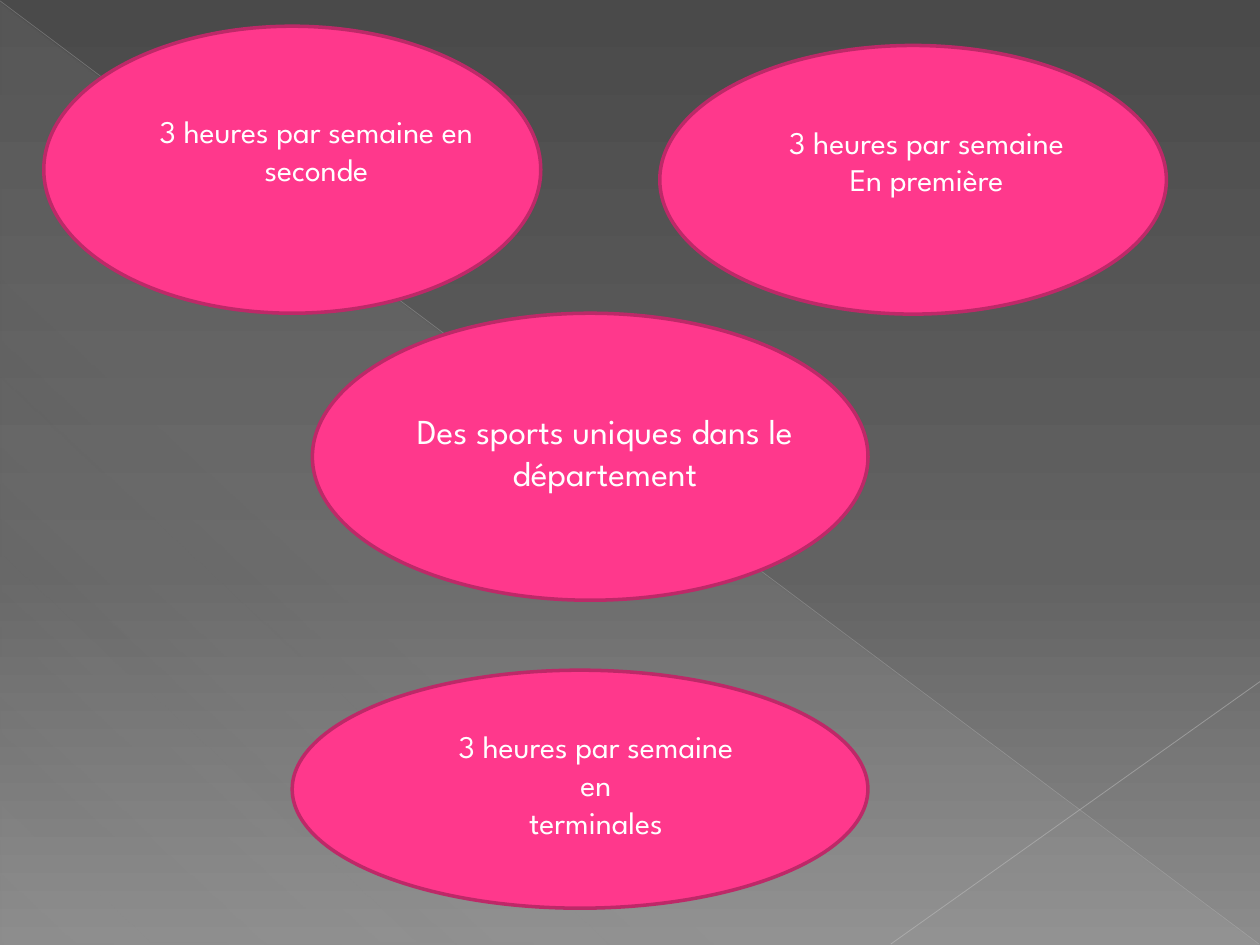
import pptx
import pptx.util
import pptx.dml.color
import pptx.enum.shapes
import pptx.enum.text
import pptx.oxml
import pptx.oxml.ns
from lxml import etree

Pt = pptx.util.Pt
qn = pptx.oxml.ns.qn
SHAPE = pptx.enum.shapes.MSO_SHAPE
FONT = "League Spartan"
COLORS = {
    "bg_top": "4A4A4A", "bg_mid": "626262", "bg_bottom": "8C8C8C",
    "veil": "D2D2D2", "diagonal": "BFBFBF", "corner": "C6C6C6",
    "pink": "FF388C", "pink_edge": "BD2968", "text": "FFFFFF",
}


def rgb(name):
    return pptx.dml.color.RGBColor.from_string(COLORS[name])


def set_alpha(color, percent):
    etree.SubElement(color, qn("a:alpha")).set("val", str(percent * 1000))


def replace_fill(fill, stops, angle):
    """Swap a fill element for a linear gradient of (position, colour, opacity) stops."""
    grad = etree.Element(qn("a:gradFill"), rotWithShape="1")
    stop_list = etree.SubElement(grad, qn("a:gsLst"))
    for position, name, opacity in stops:
        gs = etree.SubElement(stop_list, qn("a:gs"), pos=str(position * 1000))
        color = etree.SubElement(gs, qn("a:srgbClr"), val=COLORS[name])
        if opacity < 100:
            set_alpha(color, opacity)
    etree.SubElement(grad, qn("a:lin"), ang=str(angle * 60000), scaled="0")
    fill.getparent().replace(fill, grad)


def add_line(s, start, end, name, width, opacity):
    line = s.shapes.add_connector(
        pptx.enum.shapes.MSO_CONNECTOR.STRAIGHT, *map(Pt, start + end))
    line.line.width = Pt(width)
    line.line.color.rgb = rgb(name)
    sp_pr = line._element.spPr
    set_alpha(sp_pr.find(".//" + qn("a:srgbClr")), opacity)
    etree.SubElement(sp_pr, qn("a:effectLst"))


def add_backdrop(s, width, height):
    s.background.fill.solid()
    replace_fill(s.element.find(".//" + qn("p:bgPr"))[0],
                 [(0, "bg_top", 100), (60, "bg_mid", 100), (100, "bg_bottom", 100)], 90)
    veil = s.shapes.add_shape(SHAPE.RIGHT_TRIANGLE, Pt(0.5), Pt(1.5),
                              Pt(width - 1), Pt(height - 1.5))
    veil.shadow.inherit = False
    veil.line.fill.background()
    veil.fill.solid()
    replace_fill(veil._element.spPr.find(qn("a:solidFill")),
                 [(0, "veil", 10), (70, "veil", 8), (100, "veil", 1)], 133)
    add_line(s, (0, 0.5), (width - 0.5, height - 0.5), "diagonal", 0.39, 35)
    add_line(s, (width, 389.5), (509, height - 0.5), "corner", 0.47, 45)


def add_bubble(s, box, label_box, lines, size):
    """Draw an ellipse in box; label_box is measured from the ellipse's corner."""
    left, top, width, height = box
    oval = s.shapes.add_shape(SHAPE.OVAL, *map(Pt, box))
    oval.shadow.inherit = False
    oval.fill.solid()
    oval.fill.fore_color.rgb = rgb("pink")
    oval.line.color.rgb = rgb("pink_edge")
    oval.line.width = Pt(2)

    dx, dy, label_width, label_height = label_box
    label = s.shapes.add_textbox(Pt(left + dx), Pt(top + dy),
                                 Pt(label_width), Pt(label_height))
    tf = label.text_frame
    tf.word_wrap = True
    tf.text = "\n".join(lines)
    for p in tf.paragraphs:
        p.alignment = pptx.enum.text.PP_ALIGN.CENTER
        for r in p.runs:
            r.font.name = FONT
            r.font.size = Pt(size)
            r.font.color.rgb = rgb("text")


def main():
    width, height = 720, 540
    prs = pptx.Presentation()
    prs.slide_width, prs.slide_height = Pt(width), Pt(height)
    s = prs.slides.add_slide(prs.slide_layouts[6])
    add_backdrop(s, width, height)
    bubbles = [
        ((25, 15, 284, 164), (51, 45.5, 209.5, 94),
         ["3 heures par semaine en seconde"], 18),
        ((178.5, 179, 317.5, 164), (51, 51.5, 232.5, 55.5),
         ["Des sports uniques dans le département"], 20),
        ((167, 383, 329, 136), (80, 29, 187, 73),
         ["3 heures par semaine en", "terminales"], 18),
        ((377, 26, 289.5, 153.5), (50.5, 40.5, 204, 51),
         ["3 heures par semaine", "En première"], 18),
    ]
    for bubble in bubbles:
        add_bubble(s, *bubble)
    prs.save("out.pptx")


if __name__ == "__main__":
    main()
